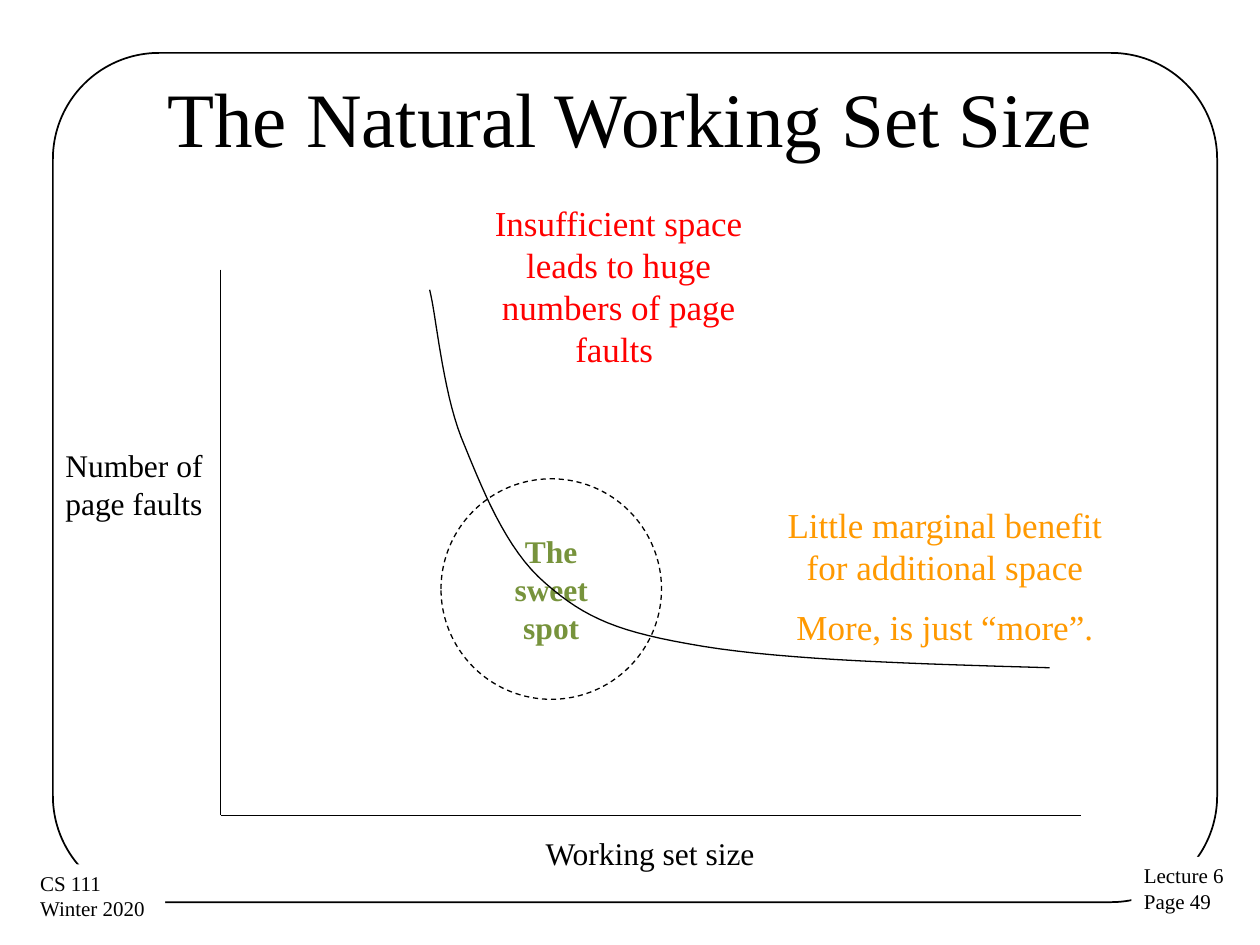
"""Build a slide that charts page faults against working set size."""
import dataclasses
import typing

import lxml.etree
import pptx
import pptx.dml.color
import pptx.enum.dml
import pptx.enum.shapes
import pptx.enum.text
import pptx.oxml.ns
import pptx.util

Inches = pptx.util.Inches
Pt = pptx.util.Pt
Form = pptx.enum.shapes.MSO_SHAPE
Align = pptx.enum.text.PP_ALIGN
Anchor = pptx.enum.text.MSO_ANCHOR
Point = tuple[float, float]


@dataclasses.dataclass(frozen=True)
class Theme:
    """Hold the colours, font and sizes of the slide."""
    font: str = "Times New Roman"
    ink: str = "000000"
    paper: str = "FFFFFF"
    alert: str = "FF0000"
    mild: str = "FF9900"
    sweet: str = "77933C"
    title: int = 44
    note: int = 20
    label: int = 18
    foot: int = 12
    thin: float = 0.75
    frame: float = 1


THEME = Theme()


@dataclasses.dataclass(frozen=True)
class Label:
    """Describe one block of text and its box."""
    box: tuple[float, float, float, float]
    lines: tuple[str, ...]
    size: int
    color: str = THEME.ink
    align: typing.Any = Align.CENTER
    anchor: typing.Any = Anchor.TOP
    wrap: bool = True
    bold: bool = False
    gap: float = 0
    fill: str | None = None


TITLE = Label((0.5, 0.3, 9, 1.25), ("The Natural Working Set Size",),
              THEME.title, anchor=Anchor.MIDDLE)
FEET = (
    Label((8.98, 6.8, 0.85, 0.51), ("Lecture 6", "Page 49"), THEME.foot,
          align=Align.LEFT, wrap=False, fill=THEME.paper),
    Label((0.22, 6.86, 1.09, 0.51), ("CS 111", "Winter 2020"), THEME.foot,
          align=Align.LEFT, wrap=False, fill=THEME.paper),
)
NAMES = (
    Label((0.42, 3.49, 1.51, 1.31), ("Number of page faults",), THEME.label,
          align=Align.LEFT),
    Label((3.66, 6.57, 3, 0.51), ("Working set size",), THEME.label),
)
SPOT = Label((3.5, 3.8, 1.75, 1.75), ("The", "sweet", "spot"), THEME.label,
             THEME.sweet, anchor=Anchor.MIDDLE, wrap=False, bold=True)
NOTES = (
    Label((3.66, 1.55, 2.5, 1.45),
          ("Insufficient space leads to huge numbers of page faults ",),
          THEME.note, THEME.alert),
    Label((6.12, 3.95, 2.76, 1.28),
          ("Little marginal benefit for additional space",
           "More, is just “more”."), THEME.note, THEME.mild, gap=10),
)
TOP, BASE, END = (1.75, 2.14), (1.75, 6.47), (8.58, 6.47)
CURVE: tuple[Point, ...] = (
    (8.33, 5.3), (7.29, 5.27), (6.25, 5.24), (5.58, 5.13),
    (4.91, 5.02), (4.65, 4.91), (4.33, 4.63),
    (4.01, 4.36), (3.82, 3.86), (3.66, 3.47),
    (3.51, 3.08), (3.46, 2.49), (3.41, 2.3),
)
STEPS = 16


def tint(code: str) -> pptx.dml.color.RGBColor:
    """Turn a hex code into a colour."""
    return pptx.dml.color.RGBColor.from_string(code)


def stroke(line: typing.Any, width: float) -> None:
    """Give a line its ink and width."""
    line.color.rgb = tint(THEME.ink)
    line.width = Pt(width)


def write(shape: typing.Any, label: Label) -> None:
    """Put the lines of a label into a shape."""
    frame = shape.text_frame
    frame.word_wrap = label.wrap
    frame.vertical_anchor = label.anchor
    for index, text in enumerate(label.lines):
        para = frame.add_paragraph() if index else frame.paragraphs[0]
        para.alignment = label.align
        if index and label.gap:
            para.space_before = Pt(label.gap)
        run = para.add_run()
        run.text = text
        run.font.name = THEME.font
        run.font.size = Pt(label.size)
        run.font.bold = label.bold
        run.font.color.rgb = tint(label.color)


def add_label(slide: typing.Any, label: Label) -> None:
    """Add a text box for a label."""
    shape = slide.shapes.add_textbox(*map(Inches, label.box))
    if label.fill:
        shape.fill.solid()
        shape.fill.fore_color.rgb = tint(label.fill)
    write(shape, label)


def add_ring(slide: typing.Any, form: typing.Any,
             box: tuple[float, float, float, float],
             width: float) -> typing.Any:
    """Add an outlined shape without fill."""
    shape = slide.shapes.add_shape(form, *map(Inches, box))
    shape.shadow.inherit = False
    shape.fill.background()
    stroke(shape.line, width)
    return shape


def add_line(slide: typing.Any, start: Point, end: Point) -> None:
    """Add a straight thin line."""
    line = slide.shapes.add_connector(
        pptx.enum.shapes.MSO_CONNECTOR.STRAIGHT, *map(Inches, start + end))
    stroke(line.line, THEME.thin)
    lxml.etree.SubElement(line._element.spPr,
                          pptx.oxml.ns.qn("a:effectLst"))


def blend(knots: tuple[Point, ...], part: float) -> Point:
    """Find the point at a given part of a cubic curve."""
    rest = 1 - part
    rates = (rest ** 3, 3 * rest ** 2 * part, 3 * rest * part ** 2, part ** 3)
    return (sum(r * x for r, (x, _) in zip(rates, knots)),
            sum(r * y for r, (_, y) in zip(rates, knots)))


def add_curve(slide: typing.Any, knots: tuple[Point, ...]) -> None:
    """Add an open curve through joined cubic parts."""
    points = [blend(knots[first:first + 4], step / STEPS)
              for first in range(0, len(knots) - 1, 3)
              for step in range(1, STEPS + 1)]
    maker = slide.shapes.build_freeform(*map(Inches, knots[0]))
    maker.add_line_segments([(Inches(x), Inches(y)) for x, y in points],
                            close=False)
    shape = maker.convert_to_shape()
    shape.shadow.inherit = False
    shape.fill.background()
    stroke(shape.line, THEME.thin)


def main() -> None:
    """Draw the slide and save it."""
    deck = pptx.Presentation()
    deck.slide_width, deck.slide_height = Inches(10), Inches(7.5)
    slide = deck.slides.add_slide(deck.slide_layouts[6])
    border = add_ring(slide, Form.ROUNDED_RECTANGLE,
                      (0.42, 0.42, 9.24, 6.74), THEME.frame)
    border.adjustments[0] = 0.125
    for label in (*FEET, TITLE):
        add_label(slide, label)
    add_line(slide, TOP, BASE)
    add_line(slide, BASE, END)
    for label in NAMES:
        add_label(slide, label)
    ring = add_ring(slide, Form.OVAL, SPOT.box, THEME.thin)
    ring.line.dash_style = pptx.enum.dml.MSO_LINE.DASH
    write(ring, SPOT)
    for label in NOTES:
        add_label(slide, label)
    add_curve(slide, CURVE)
    deck.save("out.pptx")


if __name__ == "__main__":
    main()
